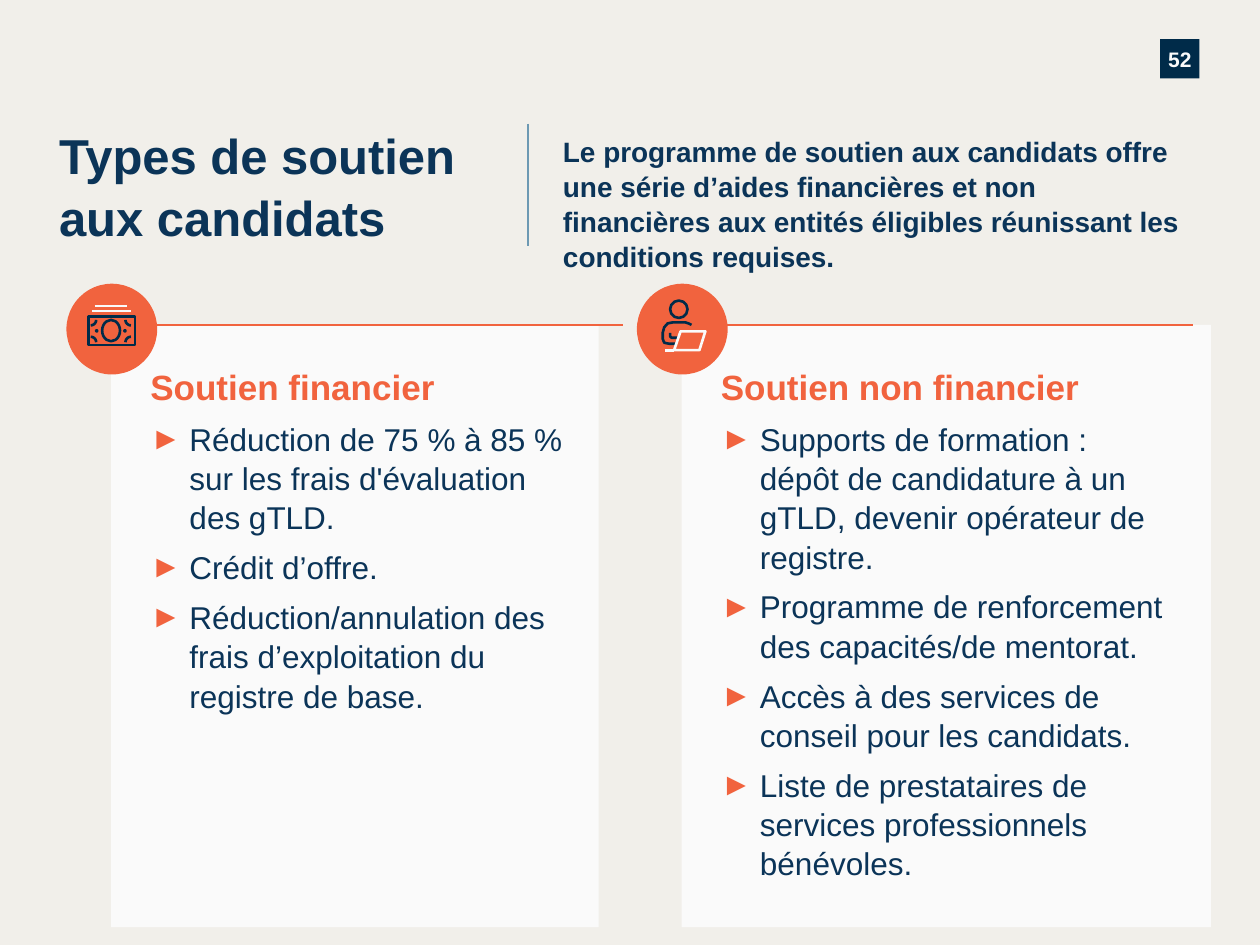
from math import cos, pi, sin

from lxml.etree import SubElement
from pptx import Presentation
from pptx.dml.color import RGBColor
from pptx.enum.shapes import MSO_CONNECTOR as LINK, MSO_SHAPE as SHAPE
from pptx.enum.text import MSO_ANCHOR as ANCHOR, MSO_AUTO_SIZE as FIT, PP_ALIGN as ALIGN
from pptx.oxml.ns import qn
from pptx.util import Cm, Pt


class Theme:
    font = "Arial"
    paper, panel = "F1EFEA", "FAFAFA"
    navy, ink = "0B3458", "002B49"
    accent, rule = "F1633E", "6D99B3"
    title, head, list, intro, page = 28, 20, 18, 16, 12
    stroke, icon = 1.25, 1.5


def write(para, text, size, color, bold=True, **form):
    para.text = text
    look = dict(name=Theme.font, size=Pt(size), bold=bold)
    for key, val in look.items():
        setattr(para.font, key, val)
    para.font.color.rgb = RGBColor.from_string(color)
    form = dict(alignment=ALIGN.LEFT, line_spacing=1.04, space_before=Pt(0)) | form
    for key, val in form.items():
        setattr(para, key, val)


def draw(kind, spots, color, width=Theme.icon, close=False):
    """Draw a line, an outlined shape (left, top, width, height) or a path, in cm."""
    if kind == "line":
        (x1, y1), (x2, y2) = spots
        item = shapes.add_connector(LINK.STRAIGHT, Cm(x1), Cm(y1), Cm(x2), Cm(y2))
        SubElement(item._element.spPr, qn("a:effectLst"))
    else:
        if kind == "path":
            first, *rest = [(Cm(x), Cm(y)) for x, y in spots]
            pen = shapes.build_freeform(*first)
            pen.add_line_segments(rest, close=close)
            item = pen.convert_to_shape()
        else:
            item = shapes.add_shape(kind, *map(Cm, spots))
        item.shadow.inherit = False
        item.fill.background()
    item.line.color.rgb = RGBColor.from_string(color)
    item.line.width = Pt(width)


deck = Presentation()
deck.slide_width, deck.slide_height = Cm(25.4), Cm(19.05)
slide = deck.slides.add_slide(deck.slide_layouts.get_by_name("Two Content"))
shapes = slide.shapes
slide.background.fill.solid()
slide.background.fill.fore_color.rgb = RGBColor.from_string(Theme.paper)

# Title, introduction and page number
title, *bodies = slide.placeholders
intro = shapes.add_textbox(0, 0, 0, 0)
page = shapes.add_shape(SHAPE.RECTANGLE, 0, 0, 0, 0)
page.shadow.inherit = False
page.fill.solid()
page.fill.fore_color.rgb = RGBColor.from_string(Theme.ink)
page.line.fill.background()

# Panels: left, width, right inset, heading, points
panels = [
    (2.24, 9.83, 0.61, "Soutien financier", [
        "Réduction de 75 % à 85 % sur les frais d'évaluation des gTLD.",
        "Crédit d’offre.",
        "Réduction/annulation des frais d’exploitation du registre de base.",
    ]),
    (13.74, 10.67, 0.89, "Soutien non financier", [
        "Supports de formation : dépôt de candidature à un gTLD, devenir opérateur de registre.",
        "Programme de renforcement des capacités/de mentorat.",
        "Accès à des services de conseil pour les candidats.",
        "Liste de prestataires de services professionnels bénévoles.",
    ]),
]
top = 6.55

# Frames: box, insets (left, top, right, bottom), anchor
frames = [
    (title, (1.19, 2.49, 9.83, 2.34), (0, 0, 0, 0), ANCHOR.TOP),
    (intro, (11.35, 2.69, 12.55, 2.06), (0, 0, 0, 0), ANCHOR.TOP),
    (page, (23.39, 0.79, 0.79, 0.79), (0, 0, 0, 0), ANCHOR.MIDDLE),
]
for body, (left, wide, inset, _, _) in zip(bodies, panels):
    frames.append((body, (left, top, wide, 12.14), (0.79, 0.79, inset, 0.79), ANCHOR.TOP))
for item, box, pad, anchor in frames:
    for key, val in zip(("left", "top", "width", "height"), box):
        setattr(item, key, Cm(val))
    for side, val in zip(("left", "top", "right", "bottom"), pad):
        setattr(item.text_frame, f"margin_{side}", Cm(val))
    form = dict(word_wrap=True, auto_size=FIT.NONE, vertical_anchor=anchor)
    for key, val in form.items():
        setattr(item.text_frame, key, val)

write(title.text_frame.paragraphs[0], "Types de soutien aux candidats", Theme.title, Theme.navy)
write(intro.text_frame.paragraphs[0],
      "Le programme de soutien aux candidats offre une série d’aides financières et non "
      "financières aux entités éligibles réunissant les conditions requises.",
      Theme.intro, Theme.navy)
write(page.text_frame.paragraphs[0], "52", Theme.page, Theme.panel, alignment=ALIGN.CENTER)
draw("line", [(10.64, 2.49), (10.64, 4.95)], Theme.rule, Theme.stroke)

for body, (left, _, _, head, points) in zip(bodies, panels):
    body.fill.solid()
    body.fill.fore_color.rgb = RGBColor.from_string(Theme.panel)
    para = body.text_frame.paragraphs[0]
    write(para, head, Theme.head, Theme.accent)
    props = para._p.get_or_add_pPr()
    props.set("marL", "0")
    props.set("indent", "0")
    SubElement(props, qn("a:buNone"))
    for point in points:
        para = body.text_frame.add_paragraph()
        write(para, point, Theme.list, Theme.navy, bold=False, space_before=Pt(6))
        props = para._p.get_or_add_pPr()
        props.set("marL", str(Cm(0.79)))
        props.set("indent", str(-Cm(0.79)))
        tint = SubElement(props, qn("a:buClr"))
        SubElement(tint, qn("a:srgbClr"), val=Theme.accent)
        SubElement(props, qn("a:buFont"), typeface=Theme.font)
        SubElement(props, qn("a:buChar"), char="►")
    draw("line", [(left, top), (left + 10.31, top)], Theme.accent, Theme.stroke)
    disc = shapes.add_shape(SHAPE.OVAL, Cm(left - 0.9), Cm(5.72), Cm(1.83), Cm(1.83))
    disc.shadow.inherit = False
    disc.fill.solid()
    disc.fill.fore_color.rgb = RGBColor.from_string(Theme.accent)
    disc.line.fill.background()

# Banknote icon
draw(SHAPE.RECTANGLE, (1.78, 6.38, 0.94, 0.58), Theme.ink)
draw(SHAPE.OVAL, (2.06, 6.45, 0.36, 0.43), Theme.ink)
for x, way in ((1.83, 1), (2.64, -1)):
    draw(SHAPE.OVAL, (x + way * 0.12 - 0.01, 6.66, 0.02, 0.02), Theme.ink)
    for y, turn in ((6.45, 1), (6.9, -1)):
        angles = [step * pi / 12 for step in range(7)]
        arc = [(x + way * 0.11 * cos(a), y + turn * 0.11 * sin(a)) for a in angles]
        draw("path", arc, Theme.ink)
draw("line", [(1.85, 6.27), (2.64, 6.27)], Theme.panel)
draw("line", [(1.91, 6.17), (2.57, 6.17)], Theme.panel)

# Person with laptop icon
draw(SHAPE.OVAL, (13.51, 6.06, 0.35, 0.35), Theme.ink)
arm = [(13.67, 6.81), (13.54, 6.81), (13.51, 6.78), (13.51, 6.71)]
torso = [(13.94, 6.55), (13.88, 6.52), (13.82, 6.5), (13.56, 6.5), (13.46, 6.52),
         (13.39, 6.6), (13.36, 6.71), (13.36, 6.83), (13.39, 6.91), (13.49, 6.93),
         (13.64, 6.93)]
laptop = [(13.72, 6.68), (14.22, 6.68), (14.1, 7.06), (13.59, 7.06)]
draw("path", arm, Theme.ink)
draw("path", torso, Theme.ink)
draw("line", [(13.41, 7.06), (13.59, 7.06)], Theme.panel)
draw("path", laptop, Theme.panel, close=True)

deck.save("out.pptx")
